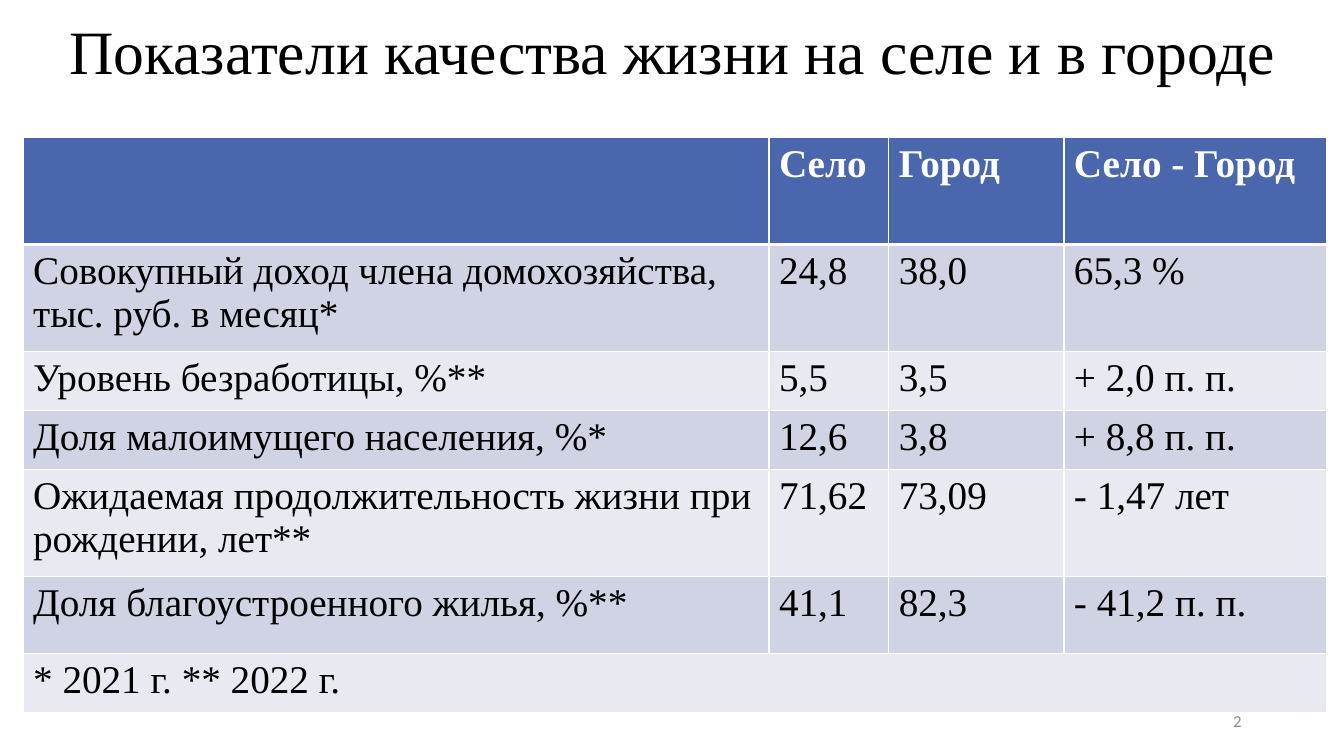
import dataclasses

import lxml.etree
import pptx
import pptx.dml.color
import pptx.enum.text
import pptx.oxml.ns
import pptx.slide
import pptx.table
import pptx.util

Pt = pptx.util.Pt
RGBColor = pptx.dml.color.RGBColor
Align = pptx.enum.text.PP_ALIGN

BLACK = RGBColor(0x00, 0x00, 0x00)
WHITE = RGBColor(0xFF, 0xFF, 0xFF)
GRAY = RGBColor(0x8C, 0x8C, 0x8C)
HEADER_BLUE = RGBColor(0x4A, 0x66, 0xAC)
BAND_DARK = RGBColor(0xD0, 0xD3, 0xE3)
BAND_LIGHT = RGBColor(0xE9, 0xEA, 0xF1)

SERIF = "Times New Roman"
THIN, THICK = 1, 3
COLUMN_WIDTHS = (532.8, 85.6, 125.1, 187.7)


@dataclasses.dataclass(frozen=True)
class TextStyle:
    font: str
    size: float
    color: RGBColor
    bold: bool = False
    align: Align = Align.LEFT
    line_spacing: float = 1.0


@dataclasses.dataclass(frozen=True)
class Label:
    text: str
    left: float
    top: float
    width: float
    height: float
    style: TextStyle


@dataclasses.dataclass(frozen=True)
class TableRow:
    height: float
    texts: tuple[str, ...]


HEADER_STYLE = TextStyle(SERIF, 28, WHITE, bold=True)
BODY_STYLE = TextStyle(SERIF, 28, BLACK)

LABELS = (
    Label("Показатели качества жизни на селе и в городе", 42.5, 10.8, 880, 56.9,
          TextStyle(SERIF, 44, BLACK, line_spacing=0.9)),
    Label("2", 678, 500.5, 216, 28.75,
          TextStyle("Calibri", 12, GRAY, align=Align.RIGHT)),
)

ROWS = (
    TableRow(76.5, ("", "Село", "Город", "Село - Город")),
    TableRow(76.5, ("Совокупный доход члена домохозяйства, тыс. руб. в месяц*",
                    "24,8", "38,0", "65,3 %")),
    TableRow(42, ("Уровень безработицы, %**", "5,5", "3,5", "+ 2,0 п. п.")),
    TableRow(42, ("Доля малоимущего населения, %*", "12,6", "3,8", "+ 8,8 п. п.")),
    TableRow(76.5, ("Ожидаемая продолжительность жизни при рождении, лет**",
                    "71,62", "73,09", "- 1,47 лет")),
    TableRow(55.3, ("Доля благоустроенного жилья, %**", "41,1", "82,3", "- 41,2 п. п.")),
    TableRow(42, ("* 2021 г. ** 2022 г.",)),
)


def write_text(frame: pptx.text.text.TextFrame, text: str, style: TextStyle) -> None:
    frame.text = text
    para = frame.paragraphs[0]
    para.alignment = style.align
    para.line_spacing = style.line_spacing
    for span in para.runs:
        span.font.name = style.font
        span.font.size = Pt(style.size)
        span.font.bold = style.bold
        span.font.color.rgb = style.color


def add_label(page: pptx.slide.Slide, label: Label) -> None:
    box = page.shapes.add_textbox(Pt(label.left), Pt(label.top), Pt(label.width), Pt(label.height))
    box.text_frame.word_wrap = True
    box.text_frame.vertical_anchor = pptx.enum.text.MSO_ANCHOR.MIDDLE
    write_text(box.text_frame, label.text, label.style)


def add_borders(cell: pptx.table._Cell, top: float, bottom: float) -> None:
    qn = pptx.oxml.ns.qn
    properties = cell._tc.get_or_add_tcPr()
    for edge, width in (("L", THIN), ("R", THIN), ("T", top), ("B", bottom)):
        line = lxml.etree.SubElement(properties, qn(f"a:ln{edge}"), w=str(Pt(width)))
        fill = lxml.etree.SubElement(line, qn("a:solidFill"))
        lxml.etree.SubElement(fill, qn("a:srgbClr"), val=str(WHITE))


def add_indicator_table(page: pptx.slide.Slide) -> None:
    height = sum(row.height for row in ROWS)
    frame = page.shapes.add_table(len(ROWS), len(COLUMN_WIDTHS), Pt(16.5), Pt(98.2),
                                  Pt(sum(COLUMN_WIDTHS)), Pt(height))
    table = frame.table
    for column, width in zip(table.columns, COLUMN_WIDTHS):
        column.width = Pt(width)

    for index, row in enumerate(ROWS):
        table.rows[index].height = Pt(row.height)
        is_header = index == 0
        band = HEADER_BLUE if is_header else BAND_DARK if index % 2 else BAND_LIGHT
        for cell in table.rows[index].cells:
            add_borders(cell, THICK if index == 1 else THIN, THICK if is_header else THIN)
            cell.fill.solid()
            cell.fill.fore_color.rgb = band
        for column, text in enumerate(row.texts):
            write_text(table.cell(index, column).text_frame, text,
                       HEADER_STYLE if is_header else BODY_STYLE)

    # The footnote spans the whole last row
    last = len(ROWS) - 1
    table.cell(last, 0).merge(table.cell(last, len(COLUMN_WIDTHS) - 1))


def main() -> None:
    deck = pptx.Presentation()
    deck.slide_width, deck.slide_height = Pt(960), Pt(540)
    page = deck.slides.add_slide(deck.slide_layouts[6])

    # Table of indicators
    add_indicator_table(page)

    # Title and page number
    for label in LABELS:
        add_label(page, label)

    deck.save("out.pptx")


if __name__ == "__main__":
    main()
